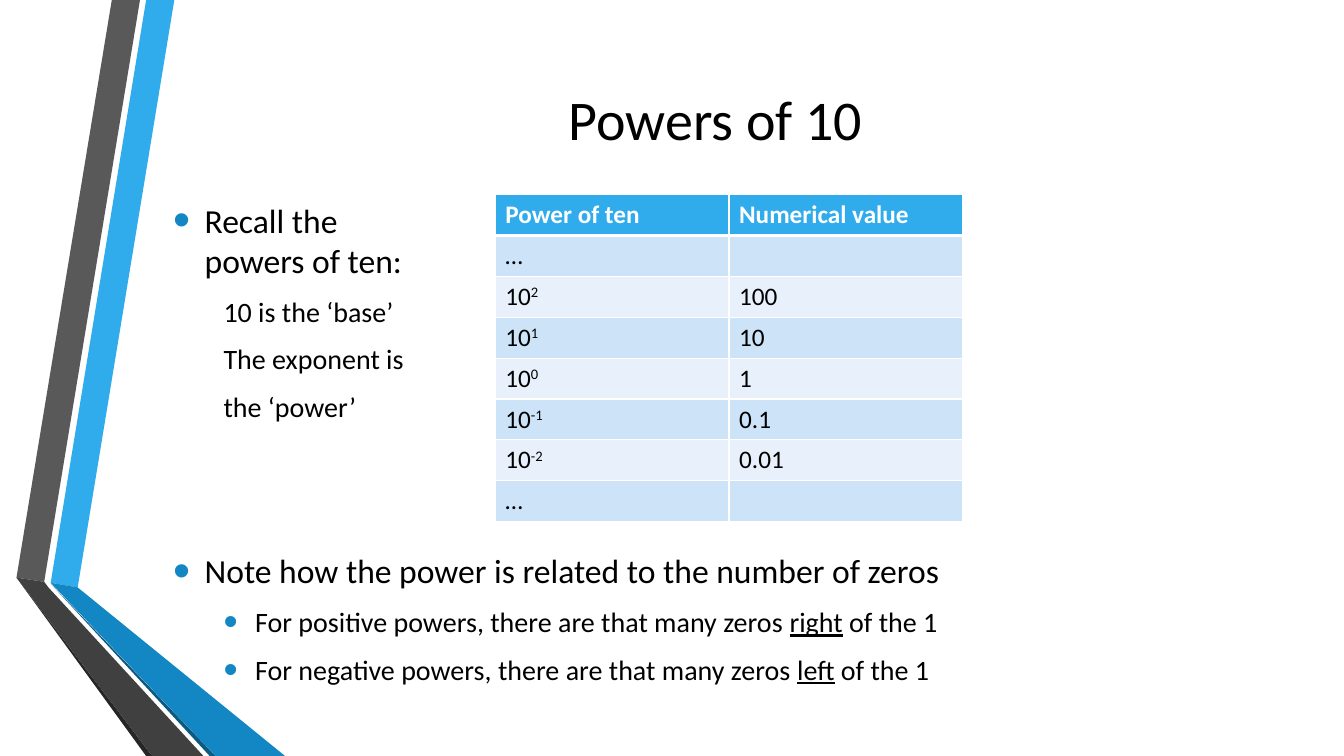
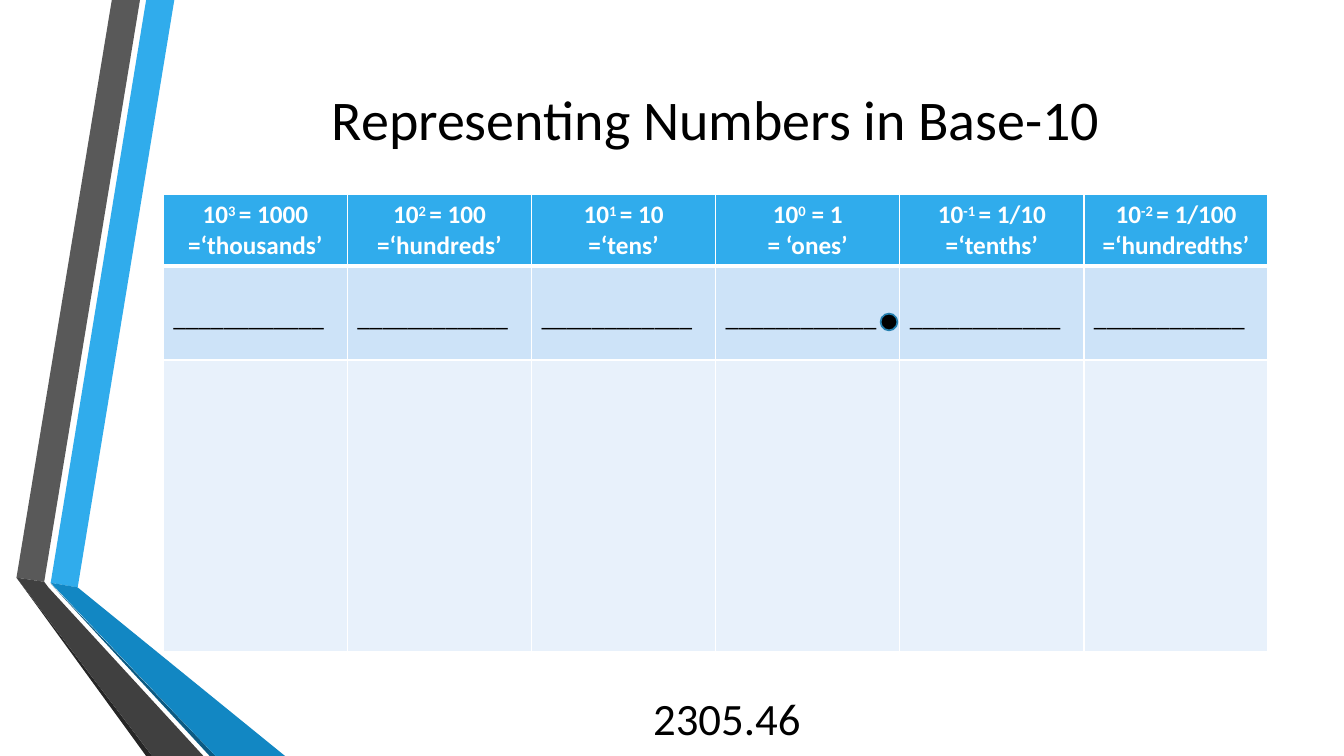
"""Build two slides about powers of ten and base-10 place values."""
from dataclasses import dataclass

from lxml import etree
from pptx import Presentation
from pptx.dml.color import RGBColor
from pptx.enum.shapes import MSO_SHAPE
from pptx.enum.text import MSO_ANCHOR, MSO_AUTO_SIZE, PP_ALIGN
from pptx.oxml.ns import qn
from pptx.util import Pt

OVAL = MSO_SHAPE.OVAL
MIDDLE = MSO_ANCHOR.MIDDLE
NO_AUTOFIT = MSO_AUTO_SIZE.NONE
LEFT, CENTER = PP_ALIGN.LEFT, PP_ALIGN.CENTER
TITLE_ONLY = 5


@dataclass(frozen=True)
class Theme:
    """Colours, font and type sizes of the deck."""

    font: str = "Calibri"
    text: str = "000000"
    white: str = "FFFFFF"
    sky: str = "30ACEC"
    blue: str = "1287C3"
    navy: str = "0C5A82"
    outline: str = "247FAF"
    gray: str = "595959"
    charcoal: str = "404040"
    soot: str = "262626"
    bands: tuple = ("CDE3F8", "E8F1FB")
    title_size: float = 40
    number_size: float = 32
    body_size: float = 24
    detail_size: float = 20
    table_size: float = 18


THEME = Theme()
CONTENT_LEFT, CONTENT_WIDTH, CONTENT_TOP = 116.6, 789.2, 139

RIBBONS = [
    (THEME.sky, [(36.2, 416.3), (55.5, 419.6), (124.5, 0), (104.4, 0)]),
    (THEME.gray, [(100, 0), (79.9, 0), (11.8, 412.6), (31.6, 415.6)]),
    (THEME.soot, [(11.8, 412.6), (104.4, 540), (108.7, 540)]),
    (THEME.navy, [(36.2, 416.9), (149.8, 540), (154, 540)]),
    (THEME.blue, [(36.2, 416.3), (154, 540), (203.6, 540), (55.5, 419.6)]),
    (THEME.charcoal, [(145.3, 540), (34.6, 419.6), (31.6, 415.6), (11.8, 412.6), (108.7, 540)]),
]

POWERS = [
    ("Power of ten", "Numerical value"),
    ("…", ""),
    ("10|2|", "100"),
    ("10|1|", "10"),
    ("10|0|", "1"),
    ("10|-1|", "0.1"),
    ("10|-2|", "0.01"),
    ("…", ""),
]

PLACES = [
    "10|3 |= 1000\n=‘thousands’",
    "10|2 |= 100\n=‘hundreds’",
    "10|1 |= 10\n=‘tens’",
    "10|0| = 1\n= ‘ones’",
    "10|-1 |= 1/10\n=‘tenths’",
    "10|-2 |= 1/100\n=‘hundredths’",
]


def color(value):
    """Turn a hex string into a colour."""
    return RGBColor.from_string(value)


def write_text(paragraph, text, size=THEME.body_size, ink=THEME.text, bold=False,
               align=LEFT, accent="superscript"):
    """Write text, with the pieces between bars raised or underlined."""
    paragraph.alignment = align
    for index, piece in enumerate(text.split("|")):
        if not piece:
            continue
        run = paragraph.add_run()
        run.text = piece
        run.font.name = THEME.font
        run.font.size = Pt(size)
        run.font.bold = bold
        run.font.color.rgb = color(ink)
        if index % 2 and accent == "superscript":
            run._r.get_or_add_rPr().set("baseline", "30000")
        elif index % 2:
            run.font.underline = True


def write_lines(frame, lines, **text_format):
    """Write each line as a paragraph and return the paragraphs."""
    paragraphs = []
    for line in lines:
        paragraph = frame.add_paragraph() if paragraphs else frame.paragraphs[0]
        write_text(paragraph, line, **text_format)
        paragraphs.append(paragraph)
    return paragraphs


def set_indent(paragraph, margin, bullet=True):
    """Indent a paragraph, with a hanging bullet if wanted."""
    hanging = 22.5 if bullet else 0
    paragraph.space_before, paragraph.space_after = Pt(4), Pt(6)
    properties = paragraph._p.get_or_add_pPr()
    properties.set("marL", str(Pt(margin)))
    properties.set("indent", str(-Pt(hanging)))
    if bullet:
        bullet_color = etree.SubElement(properties, qn("a:buClr"))
        etree.SubElement(bullet_color, qn("a:srgbClr"), val=THEME.blue)
        etree.SubElement(properties, qn("a:buSzPct"), val="145000")
        etree.SubElement(properties, qn("a:buFont"), typeface="Arial")
        etree.SubElement(properties, qn("a:buChar"), char="•")


def add_text_box(slide, left, top, width, height):
    """Add a wrapping text box and return its text frame."""
    frame = slide.shapes.add_textbox(Pt(left), Pt(top), Pt(width), Pt(height)).text_frame
    frame.word_wrap = True
    return frame


def add_outline(slide, head, details, left, top, width, height, bullets):
    """Add a bulleted head line with indented details below it."""
    frame = add_text_box(slide, left, top, width, height)
    set_indent(write_lines(frame, [head])[0], 22.5)
    for detail in details:
        paragraph = frame.add_paragraph()
        write_text(paragraph, detail, size=THEME.detail_size, accent="underline")
        set_indent(paragraph, 58.5 if bullets else 36, bullets)


def add_ribbons(slide):
    """Draw the folded ribbons at the left edge."""
    for fill, points in RIBBONS:
        start, *others = [(Pt(x), Pt(y)) for x, y in points]
        builder = slide.shapes.build_freeform(*start)
        builder.add_line_segments(others, close=True)
        shape = builder.convert_to_shape()
        shape.shadow.inherit = False
        shape.fill.solid()
        shape.fill.fore_color.rgb = color(fill)
        shape.line.fill.background()


def add_slide(presentation, title):
    """Add a slide with ribbons and a centred title."""
    slide = presentation.slides.add_slide(presentation.slide_layouts[TITLE_ONLY])
    add_ribbons(slide)
    shape = slide.shapes.title
    shape.left, shape.top = Pt(CONTENT_LEFT), Pt(54)
    shape.width, shape.height = Pt(CONTENT_WIDTH), Pt(60.5)
    frame = shape.text_frame
    frame.auto_size = NO_AUTOFIT
    frame.vertical_anchor = MIDDLE
    write_lines(frame, [title], size=THEME.title_size, align=CENTER)
    return slide


def set_borders(cell, bottom):
    """Give a cell thin white borders and a chosen bottom width."""
    properties = cell._tc.get_or_add_tcPr()
    widths = {"a:lnL": 1, "a:lnR": 1, "a:lnT": 1, "a:lnB": bottom}
    for index, (tag, width) in enumerate(widths.items()):
        line = etree.Element(qn(tag), w=str(Pt(width)))
        fill = etree.SubElement(line, qn("a:solidFill"))
        etree.SubElement(fill, qn("a:srgbClr"), val=THEME.white)
        properties.insert(index, line)


def add_banded_table(slide, rows, left, width, heights, header_align=LEFT):
    """Add a table with a coloured header and banded rows."""
    table = slide.shapes.add_table(
        len(rows), len(rows[0]), Pt(left), Pt(CONTENT_TOP), Pt(width), Pt(sum(heights))).table
    for column in table.columns:
        column.width = Pt(width / len(rows[0]))
    for row_index, (values, height) in enumerate(zip(rows, heights)):
        table.rows[row_index].height = Pt(height)
        header = row_index == 0
        for column_index, value in enumerate(values):
            cell = table.cell(row_index, column_index)
            cell.fill.solid()
            cell.fill.fore_color.rgb = color(
                THEME.sky if header else THEME.bands[(row_index - 1) % 2])
            set_borders(cell, 3 if header else 1)
            write_lines(cell.text_frame, value.split("\n"), size=THEME.table_size,
                        ink=THEME.white if header else THEME.text, bold=header,
                        align=header_align if header else LEFT)
    return table


def add_decimal_point(slide):
    """Draw the dot between the ones and the tenths."""
    dot = slide.shapes.add_shape(OVAL, Pt(629), Pt(224), Pt(12), Pt(12))
    dot.shadow.inherit = False
    dot.fill.solid()
    dot.fill.fore_color.rgb = color(THEME.text)
    dot.line.color.rgb = color(THEME.outline)
    dot.line.width = Pt(1.25)


def build_powers(presentation):
    """Build the slide on powers of ten."""
    slide = add_slide(presentation, "Powers of 10")
    add_outline(slide, "Recall the powers of ten:",
                ["10 is the ‘base’", "The exponent is", "the ‘power’"],
                CONTENT_LEFT, CONTENT_TOP, 192, 180, bullets=False)
    add_outline(slide, "Note how the power is related to the number of zeros",
                ["For positive powers, there are that many zeros |right| of the 1",
                 "For negative powers, there are that many zeros |left| of the 1"],
                CONTENT_LEFT, 389.5, CONTENT_WIDTH, 108, bullets=True)
    add_banded_table(slide, POWERS, 353.8, 334, [29.2] * len(POWERS))


def build_places(presentation):
    """Build the slide on place values."""
    slide = add_slide(presentation, "Representing Numbers in Base-10")
    rows = [PLACES, ["_" * 12] * len(PLACES), [""] * len(PLACES)]
    table = add_banded_table(slide, rows, CONTENT_LEFT, CONTENT_WIDTH, [50, 67, 208],
                             header_align=CENTER)
    for cell in table.rows[1].cells:
        cell.margin_top = Pt(25.6)
    add_decimal_point(slide)
    frame = add_text_box(slide, 459.4, 489.6, 301.7, 46)
    write_lines(frame, ["2305.46"], size=THEME.number_size)


def main():
    """Build and save the presentation."""
    presentation = Presentation()
    presentation.slide_width, presentation.slide_height = Pt(960), Pt(540)
    build_powers(presentation)
    build_places(presentation)
    presentation.save("out.pptx")


if __name__ == "__main__":
    main()
